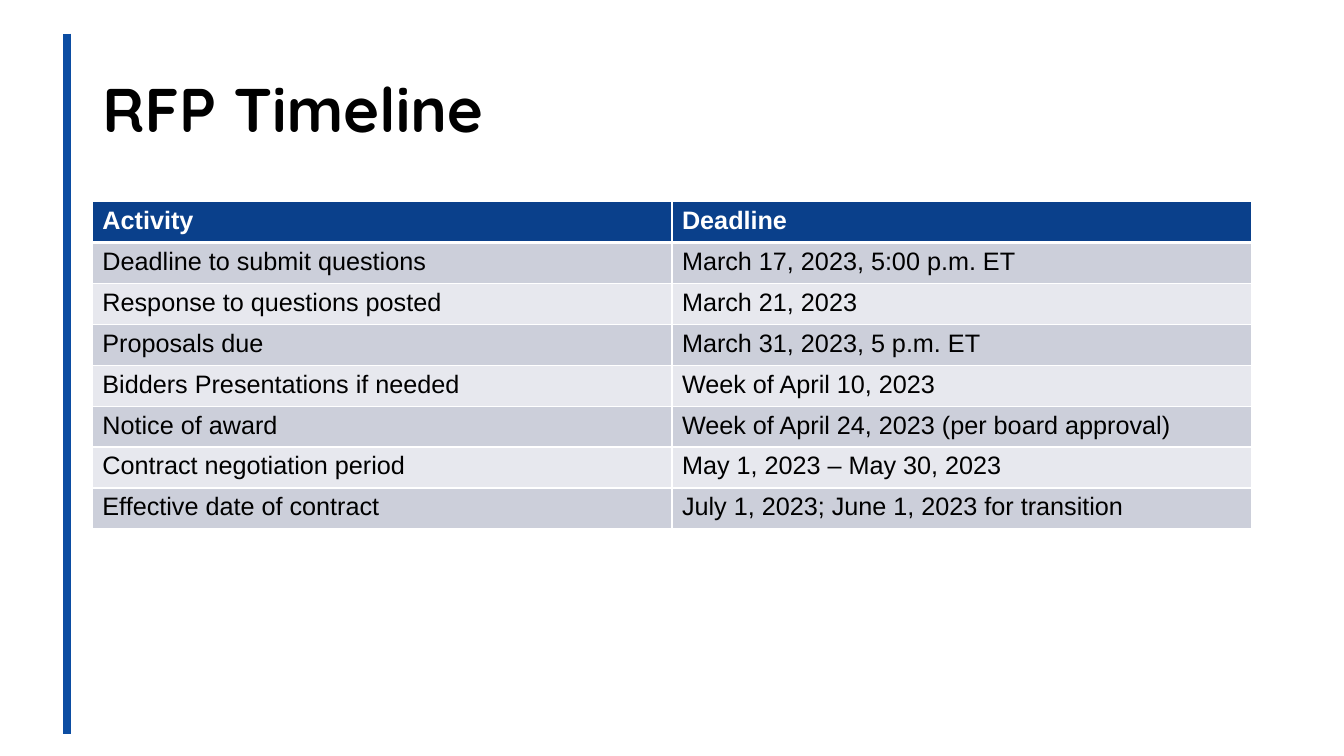
from lxml.etree import SubElement
from pptx import Presentation
from pptx.dml.color import RGBColor
from pptx.enum.shapes import MSO_CONNECTOR
from pptx.enum.text import MSO_ANCHOR
from pptx.oxml import parse_xml
from pptx.oxml.ns import nsdecls, qn
from pptx.util import Emu, Pt

ROWS = [
    ("Activity", "Deadline"),
    ("Deadline to submit questions", "March 17, 2023, 5:00 p.m. ET"),
    ("Response to questions posted", "March 21, 2023"),
    ("Proposals due", "March 31, 2023, 5 p.m. ET"),
    ("Bidders Presentations if needed", "Week of April 10, 2023"),
    ("Notice of award", "Week of April 24, 2023 (per board approval)"),
    ("Contract negotiation period", "May 1, 2023 – May 30, 2023"),
    ("Effective date of contract", "July 1, 2023; June 1, 2023 for transition"),
]


def px(length):
    return Emu(length * 9525)


def color(value):
    return RGBColor.from_string(value)


class TimelinePage:
    accent = "0C4DA2"
    header = "0A408B"
    bands = ("CCCFDA", "E7E8EE")
    white = "FFFFFF"
    black = "000000"
    title_font = "Quicksand"
    body_font = "Arial"

    def __init__(self, deck):
        self.page = deck.slides.add_slide(deck.slide_layouts[6])

    def span(self, para, text, font, size, ink, bold):
        span = para.add_run()
        span.text = text
        span.font.name = font
        span.font.size = Pt(size)
        span.font.color.rgb = color(ink)
        span.font.bold = bold

    def rule(self, x, top, bottom, weight):
        rule = self.page.shapes.add_connector(
            MSO_CONNECTOR.STRAIGHT, px(x), px(top), px(x), px(bottom))
        rule.line.color.rgb = color(self.accent)
        rule.line.width = Pt(weight)
        SubElement(rule._element.spPr, qn("a:effectLst"))

    def title(self, text, left, top, width, height):
        box = self.page.shapes.add_textbox(px(left), px(top), px(width), px(height))
        frame = box.text_frame
        frame.word_wrap = True
        frame.vertical_anchor = MSO_ANCHOR.MIDDLE
        para = frame.paragraphs[0]
        para.line_spacing = 0.9
        self.span(para, text, self.title_font, 44, self.black, True)

    def borders(self, cell, bottom):
        weights = {"lnL": 1, "lnR": 1, "lnT": 1, "lnB": bottom}
        for position, (side, weight) in enumerate(weights.items()):
            line = parse_xml(
                f'<a:{side} {nsdecls("a")} w="{Pt(weight)}"><a:solidFill>'
                f'<a:srgbClr val="{self.white}"/></a:solidFill></a:{side}>')
            cell._tc.get_or_add_tcPr().insert(position, line)

    def table(self, rows, left, top, width, row_height):
        table = self.page.shapes.add_table(
            len(rows), len(rows[0]), px(left), px(top),
            px(width), px(row_height * len(rows))).table
        for row_index, texts in enumerate(rows):
            is_header = row_index == 0
            fill = self.header if is_header else self.bands[(row_index - 1) % 2]
            for column_index, text in enumerate(texts):
                cell = table.cell(row_index, column_index)
                cell.fill.solid()
                cell.fill.fore_color.rgb = color(fill)
                self.borders(cell, bottom=3 if is_header else 1)
                ink = self.white if is_header else self.black
                self.span(cell.text_frame.paragraphs[0], text,
                          self.body_font, 18, ink, is_header)


def main():
    deck = Presentation()
    deck.slide_width, deck.slide_height = px(1280), px(720)
    page = TimelinePage(deck)

    # Accent bar
    page.rule(64, 32, 699, weight=6)

    # Heading
    page.title("RFP Timeline", 88, 38, 1104, 139)

    # Schedule
    page.table(ROWS, 88, 192, 1104, row_height=39)

    deck.save("out.pptx")


if __name__ == "__main__":
    main()
